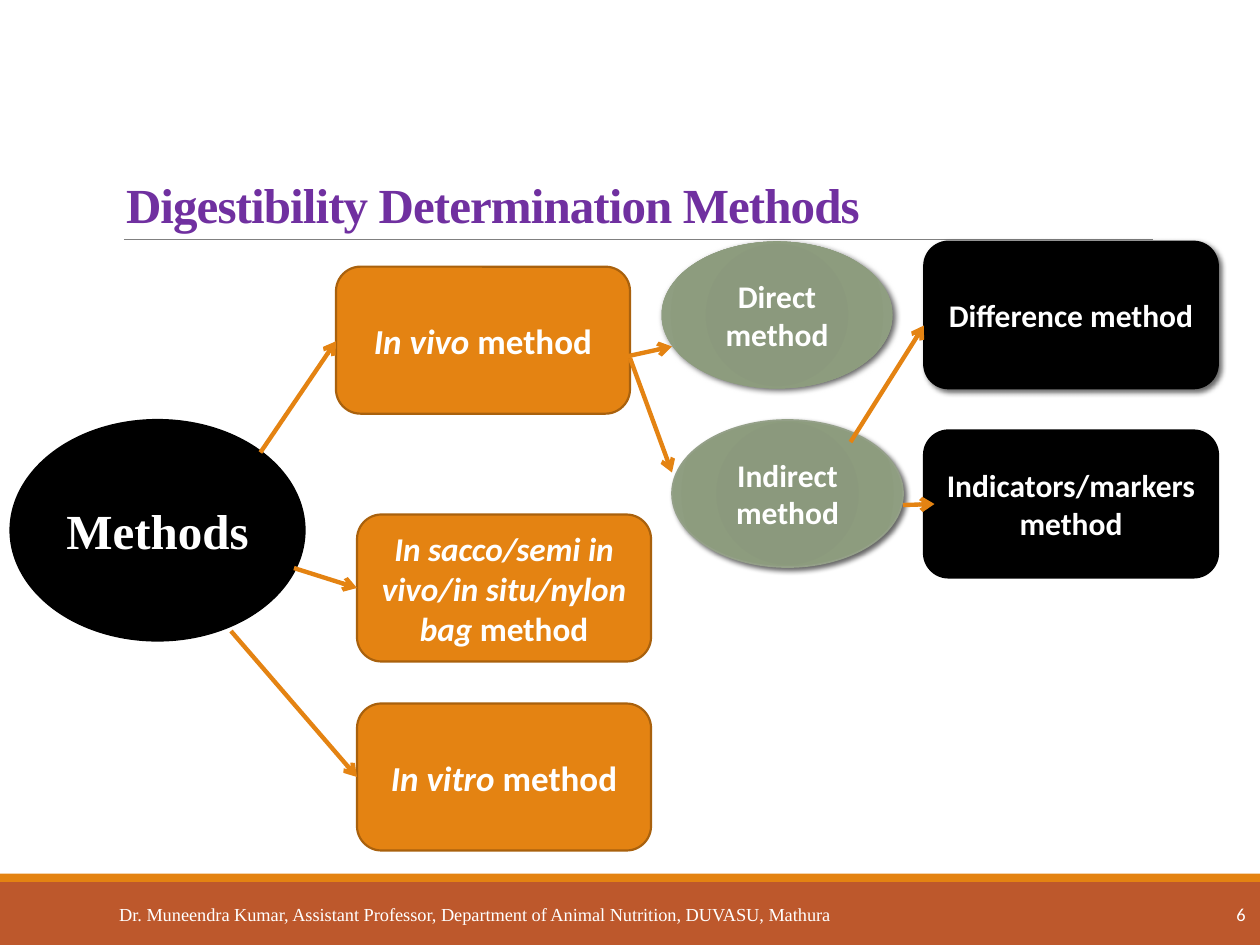
"""Build a slide that maps the methods of determining digestibility."""
import pptx
import pptx.dml.color
import pptx.enum.shapes
import pptx.enum.text
import pptx.oxml
import pptx.oxml.ns
import pptx.util

COLORS = {
    "black": "000000", "white": "FFFFFF", "orange": "E48312", "brown": "A9610D",
    "rust": "BD582C", "purple": "7030A0", "gray": "808080", "sage": "94A088",
}
SAGE_STOPS = [(0, "8A987B"), (34, "8B997D"), (70, "8D9C7E"), (100, "94A187")]
SERIF, SANS = "Times New Roman", "Calibri"
COLUMNS, ROWS = 120, 90
SHAPES = pptx.enum.shapes.MSO_SHAPE
ALIGN = pptx.enum.text.PP_ALIGN
ANCHOR = pptx.enum.text.MSO_ANCHOR
NAMESPACE = pptx.oxml.ns.nsdecls("a")


def grid(*cells):
    """Turn alternating column and row counts into lengths on the slide."""
    steps = (pptx.util.Inches(10) / COLUMNS, pptx.util.Inches(7.5) / ROWS)
    return [round(cell * steps[index % 2]) for index, cell in enumerate(cells)]


def rgb(name):
    """Look up a named colour."""
    return pptx.dml.color.RGBColor.from_string(COLORS[name])


def add_text(para, text, size=18, font=SANS, color="white", bold=True, italic=False):
    """Append one formatted run to a paragraph."""
    span = para.add_run()
    span.text = text
    span.font.size = pptx.util.Pt(size)
    span.font.name = font
    span.font.bold = bold
    span.font.italic = italic
    span.font.color.rgb = rgb(color)
    return span


def fill_gradient(shape, stops):
    """Give a shape a circular gradient."""
    shape.fill.background()
    marks = "".join(
        f'<a:gs pos="{share * 1000}"><a:srgbClr val="{color}"/></a:gs>' for share, color in stops)
    gradient = pptx.oxml.parse_xml(
        f'<a:gradFill {NAMESPACE} rotWithShape="1"><a:gsLst>{marks}</a:gsLst>'
        '<a:path path="circle"><a:fillToRect l="100000" t="100000" r="100000" b="100000"/>'
        '</a:path></a:gradFill>')
    properties = shape.element.spPr
    properties.replace(properties.find(pptx.oxml.ns.qn("a:noFill")), gradient)


def add_shadow(shape, blur):
    """Give a shape a soft shadow to the lower right."""
    shadow = pptx.oxml.parse_xml(
        f'<a:outerShdw {NAMESPACE} blurRad="{pptx.util.Pt(blur)}" dist="{pptx.util.Pt(2)}" '
        'dir="2700000" algn="br" rotWithShape="0"><a:srgbClr val="000000">'
        '<a:alpha val="60000"/></a:srgbClr></a:outerShdw>')
    shape.element.spPr.find(pptx.oxml.ns.qn("a:effectLst")).append(shadow)


def add_box(page, kind, place, fill, line=None, width=1.25, shadow=0):
    """Add a preset shape; the fill is a colour name or a list of gradient stops."""
    box = page.shapes.add_shape(kind, *grid(*place))
    box.shadow.inherit = False
    if isinstance(fill, list):
        fill_gradient(box, fill)
    else:
        box.fill.solid()
        box.fill.fore_color.rgb = rgb(fill)
    if line:
        box.line.color.rgb = rgb(line)
        box.line.width = pptx.util.Pt(width)
    else:
        box.line.fill.background()
    if shadow:
        add_shadow(box, shadow)
    return box


def add_node(page, kind, place, text, fill, lead="", size=18, font=SANS, **look):
    """Add a labelled node of the diagram with an optional italic lead."""
    box = add_box(page, kind, place, fill, **look)
    box.text_frame.word_wrap = True
    box.text_frame.vertical_anchor = ANCHOR.MIDDLE
    para = box.text_frame.paragraphs[0]
    para.alignment = ALIGN.CENTER
    if lead:
        add_text(para, lead, size=size, font=font, italic=True)
    add_text(para, text, size=size, font=font)


def add_line(page, ends, color, width, arrow=False):
    """Add a straight line, with an open arrowhead at its end if wanted."""
    line = page.shapes.add_connector(pptx.enum.shapes.MSO_CONNECTOR.STRAIGHT, *grid(*ends))
    line.line.color.rgb = rgb(color)
    line.line.width = pptx.util.Pt(width)
    if arrow:
        line.line._get_or_add_ln().append(
            pptx.oxml.parse_xml(f'<a:tailEnd {NAMESPACE} type="arrow"/>'))
    line.element.spPr.append(pptx.oxml.parse_xml(f"<a:effectLst {NAMESPACE}/>"))


def add_title(page, text):
    """Place and format the title above its rule."""
    title = page.shapes.title
    title.left, title.top, title.width, title.height = grid(10.8, 16, 99, 6.8)
    frame = title.text_frame
    frame.auto_size = pptx.enum.text.MSO_AUTO_SIZE.NONE
    frame.vertical_anchor = ANCHOR.BOTTOM
    para = frame.paragraphs[0]
    para.alignment = ALIGN.LEFT
    para.line_spacing = 0.85
    span = add_text(para, text, size=28, font=SERIF, color="purple")
    span.font._element.set("spc", "-50")
    add_line(page, (11.8, 22.8, 109.8, 22.8), "gray", 0.5)


def add_footer(page, author, number):
    """Add the bottom bars, the author line and the page number at a right tab."""
    add_box(page, SHAPES.RECTANGLE, (0, 84, COLUMNS, 6), "rust")
    add_box(page, SHAPES.RECTANGLE, (0, 83.2, COLUMNS, 0.8), "orange")
    frame = page.shapes.add_textbox(*grid(5, 84.7, 115, 4.8)).text_frame
    frame.word_wrap = True
    frame.vertical_anchor = ANCHOR.MIDDLE
    frame.margin_left = pptx.util.Inches(0.53)
    para = frame.paragraphs[0]
    para.alignment = ALIGN.LEFT
    para._p.get_or_add_pPr().append(pptx.oxml.parse_xml(
        f'<a:tabLst {NAMESPACE}><a:tab pos="{pptx.util.Inches(8.94)}" algn="r"/></a:tabLst>'))
    add_text(para, author + "\t", size=10.5, font=SERIF, bold=False)
    add_text(para, number, size=10.5, bold=False)


def add_methods(page):
    """Add the nodes of the method tree, level by level."""
    add_node(page, SHAPES.OVAL, (1, 40, 28, 21), "Methods", "black",
             size=28, font=SERIF, line="black")
    for column, row, lead, size in (
            (32, 25.4, "In vivo ", 20),
            (34, 49, "In sacco/semi in vivo/in situ/nylon bag ", 19),
            (34, 67, "In vitro ", 20)):
        add_node(page, SHAPES.ROUNDED_RECTANGLE, (column, row, 28, 14), "method", "orange",
                 lead=lead, size=size, line="brown")
    for column, row, text, line, blur in (
            (63, 23, "Direct method", None, 3.5),
            (64, 40, "Indirect method", "sage", 3)):
        add_node(page, SHAPES.OVAL, (column, row, 22, 14), text, SAGE_STOPS,
                 line=line, width=1, shadow=blur)
    for row, text, width, blur in (
            (23, "Difference method", 1, 3),
            (41, "Indicators/markers method", 1.25, 0)):
        add_node(page, SHAPES.ROUNDED_RECTANGLE, (88, row, 28, 14), text, "black",
                 line="black", width=width, shadow=blur)


def add_arrows(page):
    """Add the arrows from each method to its branches."""
    for ends in (
            (24.8, 43.1, 32, 32.5), (22, 60.1, 34, 74), (28, 54.1, 34, 56),
            (59, 34.1, 64, 33), (60, 34.1, 64, 45),
            (86, 48.1, 89, 48), (81, 42.1, 88, 31)):
        add_line(page, ends, "orange", 2.5, arrow=True)


def main():
    """Build the deck and save it."""
    deck = pptx.Presentation()
    deck.slide_width, deck.slide_height = grid(COLUMNS, ROWS)
    page = deck.slides.add_slide(deck.slide_layouts.get_by_name("Title Only"))
    add_footer(page, "Dr. Muneendra Kumar, Assistant Professor, "
               "Department of Animal Nutrition, DUVASU, Mathura", "6")
    add_title(page, "Digestibility Determination Methods")
    add_methods(page)
    add_arrows(page)
    deck.save("out.pptx")


if __name__ == "__main__":
    main()
